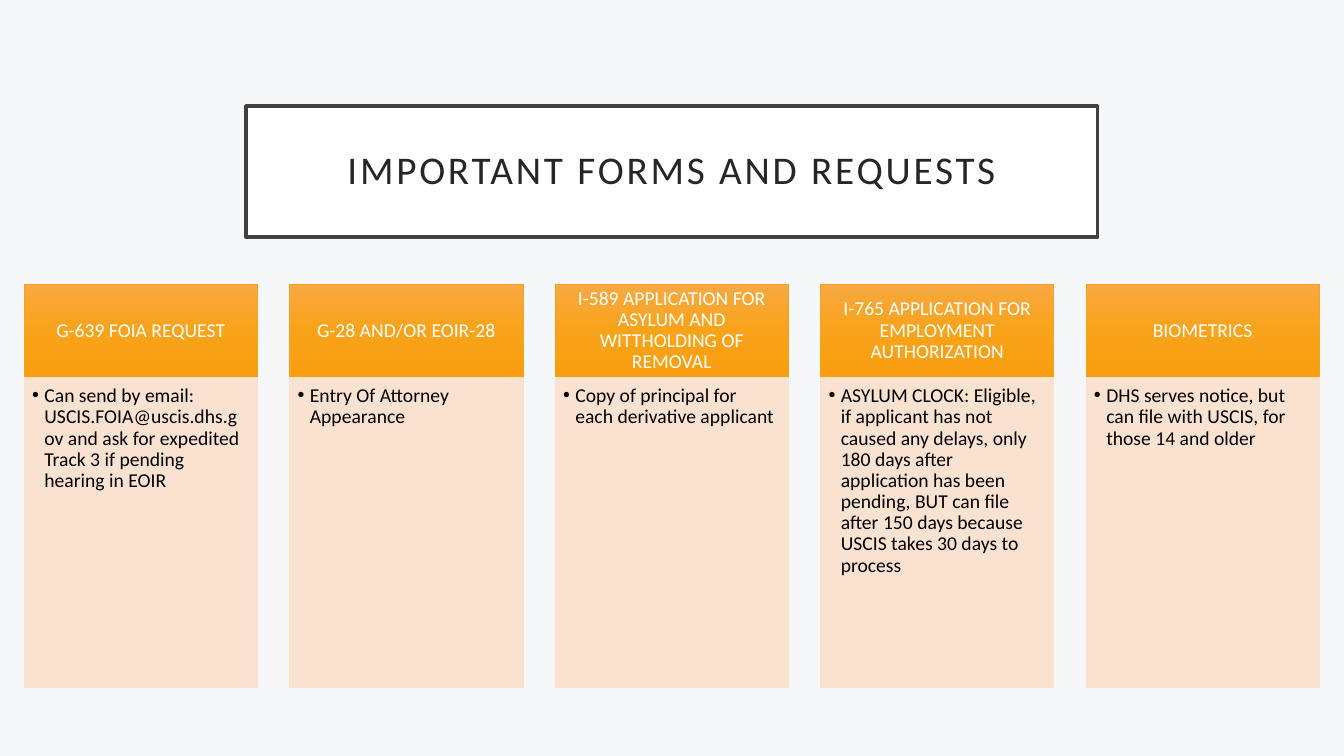
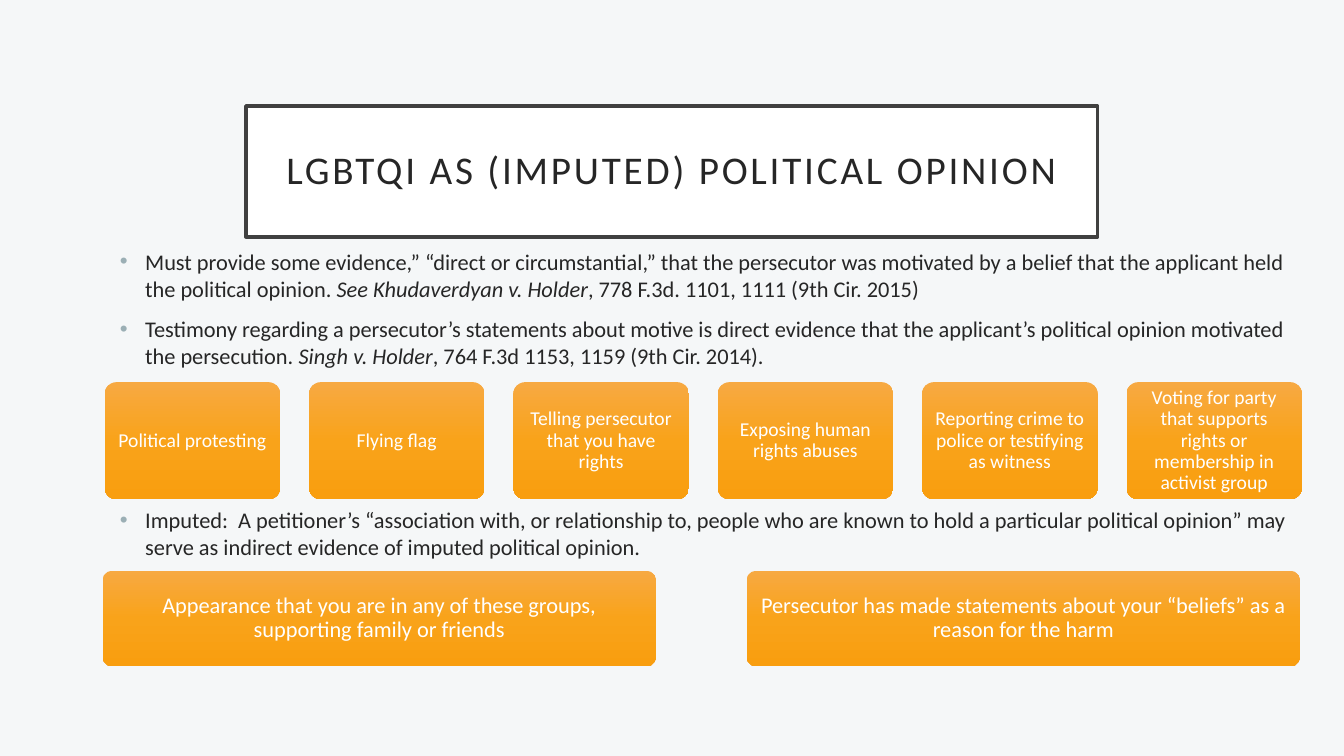
from copy import deepcopy

from lxml import etree
from pptx import Presentation
from pptx.dml.color import RGBColor
from pptx.enum import shapes, text
from pptx.oxml import ns
from pptx.util import Cm, Pt

FONT = "Calibri"
BACKGROUND = RGBColor(0xF5, 0xF7, 0xF8)
WHITE = RGBColor(0xFF, 0xFF, 0xFF)
BLACK = RGBColor(0x00, 0x00, 0x00)
INK = RGBColor(0x26, 0x26, 0x26)
FRAME = RGBColor(0x40, 0x40, 0x40)
PEACH = RGBColor(0xFA, 0xE2, 0xD1)
ORANGE_EDGE = RGBColor(0xF6, 0xA2, 0x1D)
BULLET = RGBColor(0x9B, 0xAF, 0xB5)
ORANGES = (
    (0, RGBColor(0xF7, 0xA9, 0x42)),
    (0.5, RGBColor(0xF9, 0xA3, 0x1A)),
    (1, RGBColor(0xF9, 0x9E, 0x0F)),
)
RECT = shapes.MSO_SHAPE.RECTANGLE
ROUNDED = shapes.MSO_SHAPE.ROUNDED_RECTANGLE

FORMS = [
    ("G-639 FOIA REQUEST",
     "Can send by email: USCIS.FOIA@uscis.dhs.gov and ask for expedited "
     "Track 3 if pending hearing in EOIR"),
    ("G-28 AND/OR EOIR-28", "Entry Of Attorney Appearance"),
    ("I-589 APPLICATION FOR ASYLUM AND WITTHOLDING OF REMOVAL",
     "Copy of principal for each derivative applicant"),
    ("I-765 APPLICATION FOR EMPLOYMENT AUTHORIZATION",
     "ASYLUM CLOCK: Eligible, if applicant has not caused any delays, only "
     "180 days after application has been pending, BUT can file after 150 "
     "days because USCIS takes 30 days to process"),
    ("BIOMETRICS",
     "DHS serves notice, but can file with USCIS, for those 14 and older"),
]

# Each paragraph is a list of runs; every second run is a case name in italics.
EVIDENCE = [
    ["Must provide some evidence,” “direct or circumstantial,” that the "
     "persecutor was motivated by a belief that the applicant held the "
     "political opinion. ",
     "See Khudaverdyan v. Holder",
     ", 778 F.3d. 1101, 1111 (9th Cir. 2015)"],
    ["Testimony regarding a persecutor’s statements about motive is direct "
     "evidence that the applicant’s political opinion motivated the "
     "persecution. ",
     "Singh v. Holder",
     ", 764 F.3d 1153, 1159 (9th Cir. 2014)."],
]
IMPUTED = [
    ["Imputed:  A petitioner’s “association with, or relationship to, people "
     "who are known to hold a particular political opinion” may serve as "
     "indirect evidence of imputed political opinion."],
]
ACTS = [
    "Political protesting",
    "Flying flag",
    "Telling persecutor that you have rights",
    "Exposing human rights abuses",
    "Reporting crime to police or testifying as witness",
    "Voting for party that supports rights or membership in activist group",
]
SIGNS = [
    "Appearance that you are in any of these groups, supporting family or friends",
    "Persecutor has made statements about your “beliefs” as a reason for the harm",
]


def add_bullet(paragraph, indent, color=None):
    """Give the paragraph a hanging bullet; indent is in centimetres."""
    props = paragraph._p.get_or_add_pPr()
    props.set("marL", str(Cm(indent)))
    props.set("indent", str(-Cm(indent)))
    if color is not None:
        holder = etree.Element(ns.qn("a:buClr"))
        etree.SubElement(holder, ns.qn("a:srgbClr"), val=str(color))
        props.insert_element_before(holder, "a:defRPr")
    for tag, key, value in (("a:buFont", "typeface", "Arial"),
                            ("a:buChar", "char", "•")):
        mark = etree.Element(ns.qn(tag))
        mark.set(key, value)
        props.insert_element_before(mark, "a:defRPr")


def fill_orange(shape):
    shape.fill.gradient()
    shape.fill.gradient_angle = 270
    stop_list = shape._element.spPr.find(".//" + ns.qn("a:gsLst"))
    stop_list.insert(1, deepcopy(stop_list[0]))
    for stop, (position, color) in zip(shape.fill.gradient_stops, ORANGES):
        stop.position = position
        stop.color.rgb = color


class Deck:
    """Holds the shared style and the current slide; lengths are centimetres."""

    def __init__(self):
        self.prs = Presentation()
        self.prs.slide_width, self.prs.slide_height = Cm(33.87), Cm(19.05)
        self.slide = None

    def new_slide(self, title):
        self.slide = self.prs.slides.add_slide(self.prs.slide_layouts[6])
        backdrop = self.slide.background.fill
        backdrop.solid()
        backdrop.fore_color.rgb = BACKGROUND
        heading = self.panel(RECT, (6.2, 2.67, 21.46, 3.3), WHITE, FRAME, 2.5)
        line = self.label(heading, title, 28, INK, (0.5,) * 4)
        line.runs[0].font._element.set("spc", "200")

    def panel(self, kind, box, fill=None, edge=None, weight=0.5):
        """Add a shape; without a fill colour it gets the orange gradient."""
        shape = self.slide.shapes.add_shape(kind, *map(Cm, box))
        shape.shadow.inherit = False
        if kind == ROUNDED:
            shape.adjustments[0] = 0.1
        if fill is None:
            fill_orange(shape)
        else:
            shape.fill.solid()
            shape.fill.fore_color.rgb = fill
        if edge is None:
            shape.line.fill.background()
        else:
            shape.line.color.rgb = edge
            shape.line.width = Pt(weight)
        return shape

    def label(self, shape, words, size, color, insets,
              align=text.PP_ALIGN.CENTER, anchor=text.MSO_ANCHOR.MIDDLE):
        """Fill a shape with one paragraph; insets are left, top, right, bottom."""
        frame = shape.text_frame
        frame.word_wrap = True
        frame.vertical_anchor = anchor
        (frame.margin_left, frame.margin_top,
         frame.margin_right, frame.margin_bottom) = map(Cm, insets)
        paragraph = frame.paragraphs[0]
        paragraph.text = words
        paragraph.alignment = align
        paragraph.line_spacing = 0.9
        self.style(paragraph, size, color)
        return paragraph

    def style(self, paragraph, size, color):
        font = paragraph.font
        font.name, font.size = FONT, Pt(size)
        font.color.rgb = color

    def form_column(self, left, name, note):
        width = 5.88
        header = self.panel(RECT, (left, 7.16, width, 2.35), edge=ORANGE_EDGE)
        self.label(header, name, 14, WHITE, (0.28, 0.15, 0.28, 0.15))
        body = self.panel(RECT, (left, 9.52, width, 7.8), PEACH, PEACH)
        detail = self.label(body, note, 14, BLACK, (0.2, 0.2, 0.28, 0.3),
                            text.PP_ALIGN.LEFT, text.MSO_ANCHOR.TOP)
        add_bullet(detail, 0.31)

    def tile_row(self, captions, box, pitch, size, inset):
        """Add rounded tiles at equal steps; box is that of the first tile."""
        left, *rest = box
        for i, caption in enumerate(captions):
            tile = self.panel(ROUNDED, (left + i * pitch, *rest))
            self.label(tile, caption, size, WHITE, (inset,) * 4)

    def bullets(self, top, height, points):
        area = self.slide.shapes.add_textbox(
            Cm(2.77), Cm(top), Cm(30.1), Cm(height))
        frame = area.text_frame
        frame.word_wrap = True
        for i, pieces in enumerate(points):
            point = frame.add_paragraph() if i else frame.paragraphs[0]
            if i:
                point.space_before = Pt(10)
            self.style(point, 16, INK)
            add_bullet(point, 0.64, BULLET)
            for j, piece in enumerate(pieces):
                run = point.add_run()
                run.text = piece
                if j % 2:
                    run.font.italic = True


def main():
    deck = Deck()

    deck.new_slide("IMPORTANT FORMS AND REQUESTS")
    for i, (name, note) in enumerate(FORMS):
        deck.form_column(0.61 + i * 6.69, name, note)

    deck.new_slide("LGBTQI AS (IMPUTED) POLITICAL OPINION")
    deck.bullets(6.12, 3.4, EVIDENCE)
    deck.tile_row(ACTS, (2.64, 9.63, 4.42, 2.95), 5.15, 14, 0.15)
    deck.bullets(12.64, 1.65, IMPUTED)
    deck.tile_row(SIGNS, (2.59, 14.38, 13.94, 2.41), 16.23, 16, 0.18)

    deck.prs.save("out.pptx")


if __name__ == "__main__":
    main()
